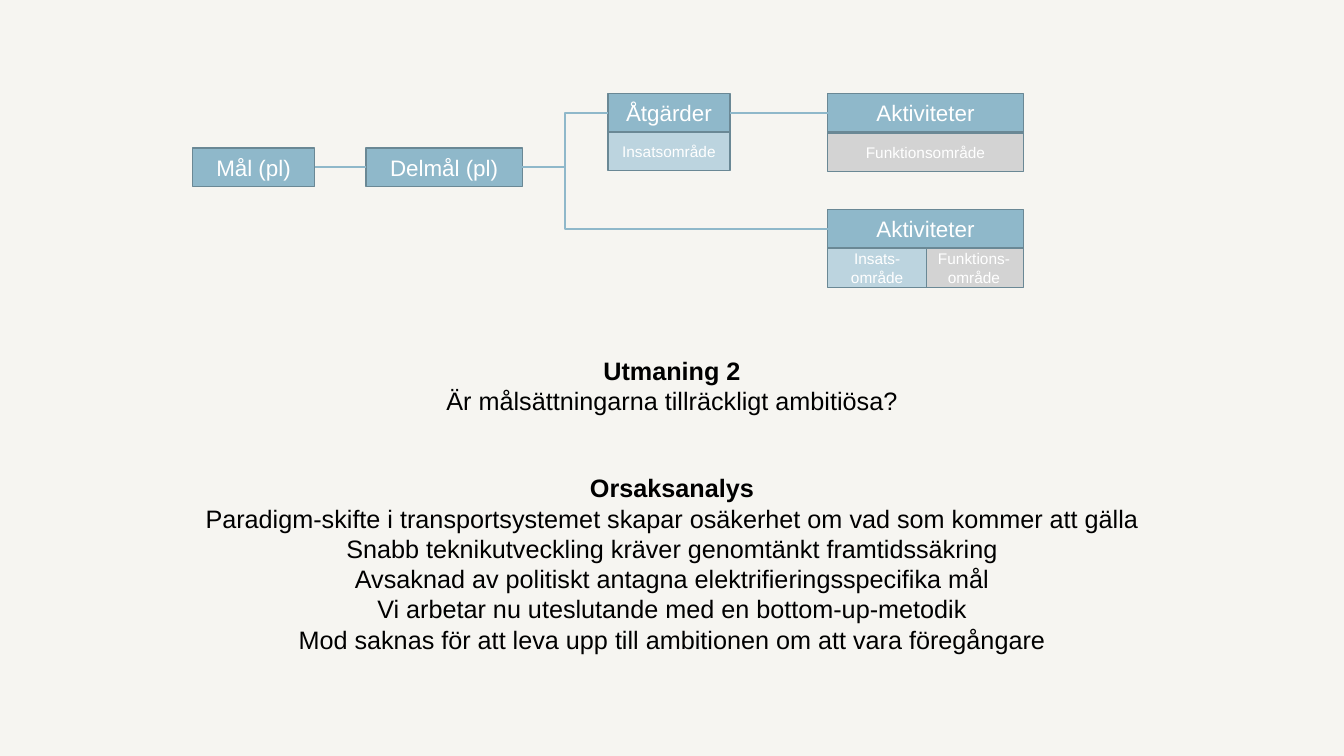
from dataclasses import dataclass

from lxml import etree
from pptx import Presentation
from pptx.dml.color import RGBColor
from pptx.enum.shapes import MSO_CONNECTOR, MSO_SHAPE
from pptx.enum.text import MSO_ANCHOR, MSO_AUTO_SIZE, PP_ALIGN
from pptx.oxml.ns import qn
from pptx.util import Inches, Pt

RECTANGLE = MSO_SHAPE.RECTANGLE
STRAIGHT, ELBOW = MSO_CONNECTOR.STRAIGHT, MSO_CONNECTOR.ELBOW
TOP, MIDDLE = MSO_ANCHOR.TOP, MSO_ANCHOR.MIDDLE
CENTER = PP_ALIGN.CENTER
NO_AUTOFIT = MSO_AUTO_SIZE.NONE
LEFT_SIDE, RIGHT_SIDE = 1, 3


@dataclass(frozen=True)
class Theme:
    font: str = "Arial"
    background: str = "F6F5F1"
    text: str = "000000"
    box_text: str = "FFFFFF"
    step: str = "8FB8CA"
    effort: str = "BCD4DF"
    function: str = "D3D3D3"
    outline: str = "6A8895"
    text_size: int = 18
    step_size: int = 16
    area_size: int = 11
    outline_width: float = 1
    link_width: float = 1.5


@dataclass(frozen=True)
class Box:
    key: str
    text: str
    left: float
    top: float
    width: float
    fill: str
    size: int
    height: float = 0.38


@dataclass(frozen=True)
class Link:
    start: str
    end: str
    kind: int = STRAIGHT
    bend: float = 0.5


@dataclass(frozen=True)
class TextBlock:
    top: float
    height: float
    lines: tuple


THEME = Theme()
SLIDE_WIDTH, SLIDE_HEIGHT = 13.33, 7.5
GOAL_TOP, UPPER_TOP, LOWER_TOP = 1.47, 0.93, 2.08
MEASURE_LEFT, ACTIVITY_LEFT = 6.03, 8.21
NARROW, WIDE, HALF = 1.21, 1.94, 0.98

BOXES = (
    Box("goal", "Mål (pl)", 1.91, GOAL_TOP, NARROW, THEME.step, THEME.step_size),
    Box("subgoal", "Delmål (pl)", 3.63, GOAL_TOP, 1.55, THEME.step, THEME.step_size),
    Box("measure", "Åtgärder", MEASURE_LEFT, UPPER_TOP, NARROW, THEME.step, THEME.step_size),
    Box("lower activity", "Aktiviteter", ACTIVITY_LEFT, LOWER_TOP, WIDE, THEME.step, THEME.step_size),
    Box("upper activity", "Aktiviteter", ACTIVITY_LEFT, UPPER_TOP, WIDE, THEME.step, THEME.step_size),
    Box("measure area", "Insatsområde", MEASURE_LEFT, 1.31, NARROW, THEME.effort, THEME.area_size),
    Box("lower function", "Funktions-område", ACTIVITY_LEFT + WIDE - HALF, 2.46, HALF,
        THEME.function, THEME.area_size, 0.39),
    Box("upper function", "Funktionsområde", ACTIVITY_LEFT, 1.32, WIDE, THEME.function, THEME.area_size),
    Box("lower effort", "Insats-område", ACTIVITY_LEFT, 2.46, HALF, THEME.effort, THEME.area_size, 0.39),
)

LINKS = (
    Link("subgoal", "measure", ELBOW),
    Link("goal", "subgoal"),
    Link("measure", "upper activity"),
    Link("subgoal", "lower activity", ELBOW, 0.14),
)

CHALLENGE = TextBlock(3.47, 0.71, ("Utmaning 2", "Är målsättningarna tillräckligt ambitiösa?"))
CAUSES = TextBlock(4.64, 1.92, (
    "Orsaksanalys",
    "Paradigm-skifte i transportsystemet skapar osäkerhet om vad som kommer att gälla",
    "Snabb teknikutveckling kräver genomtänkt framtidssäkring",
    "Avsaknad av politiskt antagna elektrifieringsspecifika mål",
    "Vi arbetar nu uteslutande med en bottom-up-metodik",
    "Mod saknas för att leva upp till ambitionen om att vara föregångare",
))


def set_values(target, values: dict) -> None:
    for name, value in values.items():
        setattr(target, name, value)


def format_paragraph(paragraph, size: int, color: str, bold: bool = False) -> None:
    set_values(paragraph, {"alignment": CENTER, "space_before": Pt(0), "line_spacing": 1.0})
    set_values(paragraph.font, {"name": THEME.font, "size": Pt(size), "bold": bold})
    paragraph.font.color.rgb = RGBColor.from_string(color)


def fill_placeholder(placeholder, block: TextBlock) -> None:
    set_values(placeholder, {"left": Inches(0), "top": Inches(block.top),
                             "width": Inches(SLIDE_WIDTH), "height": Inches(block.height)})
    frame = placeholder.text_frame
    frame.text = "\n".join(block.lines)
    set_values(frame, {"word_wrap": True, "auto_size": NO_AUTOFIT, "vertical_anchor": TOP})
    for index, paragraph in enumerate(frame.paragraphs):
        properties = paragraph._p.get_or_add_pPr()
        properties.set("marL", "0")
        properties.set("indent", "0")
        etree.SubElement(properties, qn("a:buNone"))
        format_paragraph(paragraph, THEME.text_size, THEME.text, index == 0)


def add_box(slide, box: Box):
    shape = slide.shapes.add_shape(RECTANGLE, Inches(box.left), Inches(box.top),
                                   Inches(box.width), Inches(box.height))
    shape.shadow.inherit = False
    shape.fill.solid()
    shape.fill.fore_color.rgb = RGBColor.from_string(box.fill)
    shape.line.color.rgb = RGBColor.from_string(THEME.outline)
    shape.line.width = Pt(THEME.outline_width)
    frame = shape.text_frame
    frame.text = box.text
    set_values(frame, {"word_wrap": True, "vertical_anchor": MIDDLE})
    format_paragraph(frame.paragraphs[0], box.size, THEME.box_text)
    return shape


def add_link(slide, link: Link, shapes: dict) -> None:
    start, end = shapes[link.start], shapes[link.end]
    connector = slide.shapes.add_connector(
        link.kind, start.left + start.width, start.top + start.height // 2,
        end.left, end.top + end.height // 2)
    connector.begin_connect(start, RIGHT_SIDE)
    connector.end_connect(end, LEFT_SIDE)
    connector.line.color.rgb = RGBColor.from_string(THEME.link_width and THEME.step)
    connector.line.width = Pt(THEME.link_width)
    properties = connector._element.spPr
    etree.SubElement(properties, qn("a:effectLst"))
    if link.kind == ELBOW:
        adjustments = properties.find(qn("a:prstGeom")).get_or_add_avLst()
        etree.SubElement(adjustments, qn("a:gd"), name="adj1", fmla=f"val {round(link.bend * 100000)}")


def main() -> None:
    presentation = Presentation()
    set_values(presentation, {"slide_width": Inches(SLIDE_WIDTH), "slide_height": Inches(SLIDE_HEIGHT)})
    slide = presentation.slides.add_slide(presentation.slide_layouts[1])
    slide.background.fill.solid()
    slide.background.fill.fore_color.rgb = RGBColor.from_string(THEME.background)
    for placeholder, block in zip(slide.placeholders, (CHALLENGE, CAUSES)):
        fill_placeholder(placeholder, block)
    shapes = {box.key: add_box(slide, box) for box in BOXES}
    for link in LINKS:
        add_link(slide, link, shapes)
    presentation.save("out.pptx")


if __name__ == "__main__":
    main()
